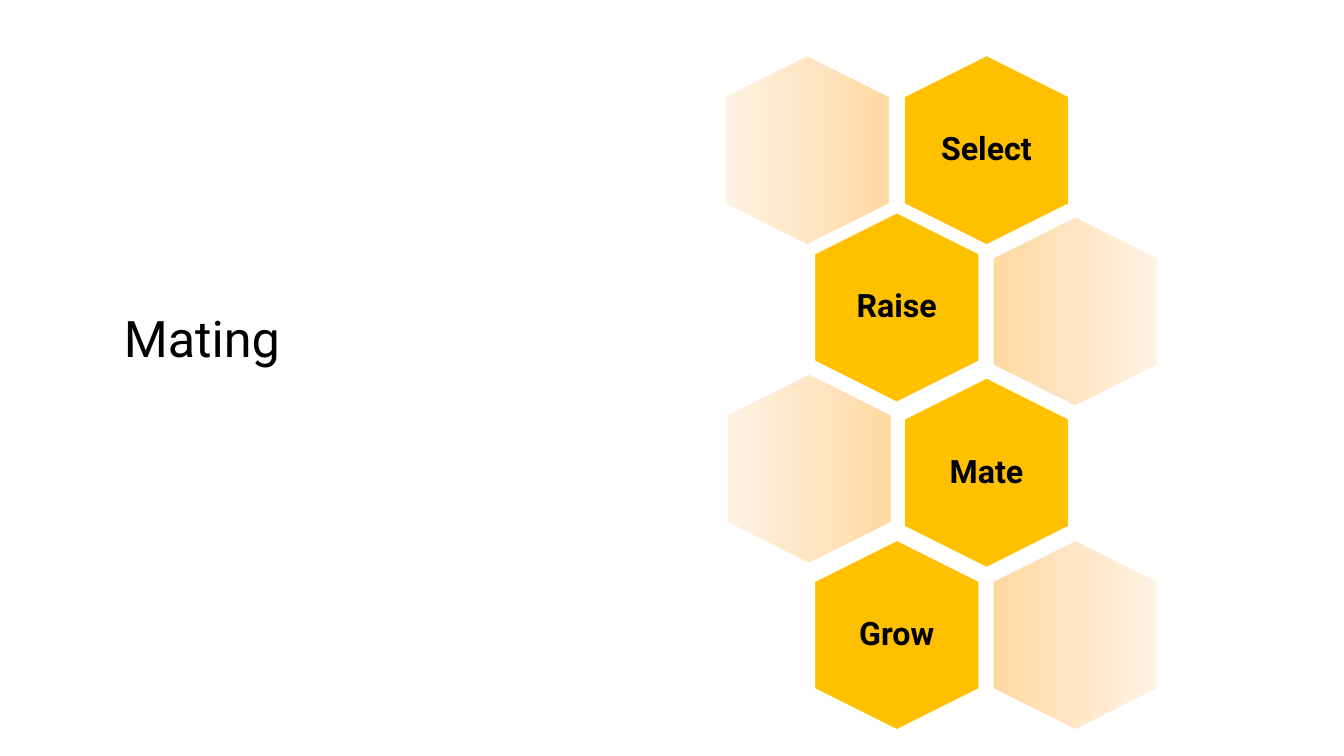
from pptx import Presentation
from pptx.dml.color import RGBColor
from pptx.enum.shapes import MSO_SHAPE
from pptx.enum.text import MSO_ANCHOR, PP_ALIGN
from pptx.oxml import parse_xml
from pptx.oxml.ns import nsdecls, qn
from pptx.util import Inches, Pt

HEXAGON = MSO_SHAPE.HEXAGON
MIDDLE = MSO_ANCHOR.MIDDLE
CENTER = PP_ALIGN.CENTER

FONT = "Roboto"
COLORS = {
    "text": "000000",
    "honey": "FFC000",
    "outline": "FFFFFF",
    "fade_start": "FFD8A0",
    "fade_middle": "FFE6C5",
    "fade_end": "FFF2E3",
}
HEX_LENGTH, HEX_WIDTH = 1.89, 1.64
LABEL_WIDTH, LABEL_HEIGHT = 1.13, 1.3

# label, left and top of its cell, left and top of the faded cell, fade angle
STEPS = [
    ("Select", 1.78, 0, 0, 0, 180),
    ("Raise", 0.89, 1.56, 2.66, 1.6, 0),
    ("Mate", 1.78, 3.2, 0.02, 3.16, 180),
    ("Grow", 0.89, 4.81, 2.66, 4.81, 0),
]


def color(name):
    return RGBColor.from_string(COLORS[name])


def add_text(slide, text, left, top, width, height, size):
    box = slide.shapes.add_textbox(
        Inches(left), Inches(top), Inches(width), Inches(height)
    )
    frame = box.text_frame
    frame.word_wrap = True
    paragraph = frame.paragraphs[0]
    paragraph.text = text
    paragraph.line_spacing = 0.9
    paragraph.font.name = FONT
    paragraph.font.size = Pt(size)
    paragraph.font.color.rgb = color("text")
    return frame


def add_title(slide, left, top, width, height):
    frame = add_text(slide, "Mating", left, top, width, height, 36)
    frame.margin_top = Inches(1.92)


def fade_fill(shape, angle):
    """Fill with a three-stop gradient that does not turn with the shape."""
    stops = "".join(
        f'<a:gs pos="{position}"><a:srgbClr val="{COLORS[name]}"/></a:gs>'
        for position, name in (
            (0, "fade_start"), (50000, "fade_middle"), (100000, "fade_end")
        )
    )
    gradient = parse_xml(
        f'<a:gradFill {nsdecls("a")} rotWithShape="0"><a:gsLst>{stops}</a:gsLst>'
        f'<a:lin ang="{angle * 60000}" scaled="0"/></a:gradFill>'
    )
    shape._element.spPr.find(qn("a:prstGeom")).addnext(gradient)


def add_cell(slide, left, top):
    """Add a hexagon standing on its point."""
    shape = slide.shapes.add_shape(
        HEXAGON, Inches(left), Inches(top), Inches(HEX_LENGTH), Inches(HEX_WIDTH)
    )
    shape.rotation = 90
    shape.adjustments[0] = 0.25
    shape.shadow.inherit = False
    shape.line.color.rgb = color("outline")
    shape.line.width = Pt(1.5)
    return shape


def add_label(slide, text, left, top):
    """Centre a label on the cell at the given place."""
    frame = add_text(
        slide,
        text,
        left + (HEX_LENGTH - LABEL_WIDTH) / 2,
        top + (HEX_WIDTH - LABEL_HEIGHT) / 2,
        LABEL_WIDTH,
        LABEL_HEIGHT,
        23,
    )
    frame.vertical_anchor = MIDDLE
    frame.margin_top = frame.margin_bottom = Inches(0.1)
    frame.paragraphs[0].alignment = CENTER
    frame.paragraphs[0].font.bold = True


def add_honeycomb(slide, left, top):
    for text, cell_x, cell_y, faded_x, faded_y, angle in STEPS:
        cell = add_cell(slide, left + cell_x, top + cell_y)
        cell.fill.solid()
        cell.fill.fore_color.rgb = color("honey")
        add_label(slide, text, left + cell_x, top + cell_y)
        fade_fill(add_cell(slide, left + faded_x, top + faded_y), angle)


def main():
    presentation = Presentation()
    presentation.slide_width = Inches(13.33)
    presentation.slide_height = Inches(7.5)
    slide = presentation.slides.add_slide(presentation.slide_layouts[6])
    add_title(slide, 1.13, 1.19, 4.95, 4.76)
    add_honeycomb(slide, 7.06, 0.67)
    presentation.save("out.pptx")


if __name__ == "__main__":
    main()
